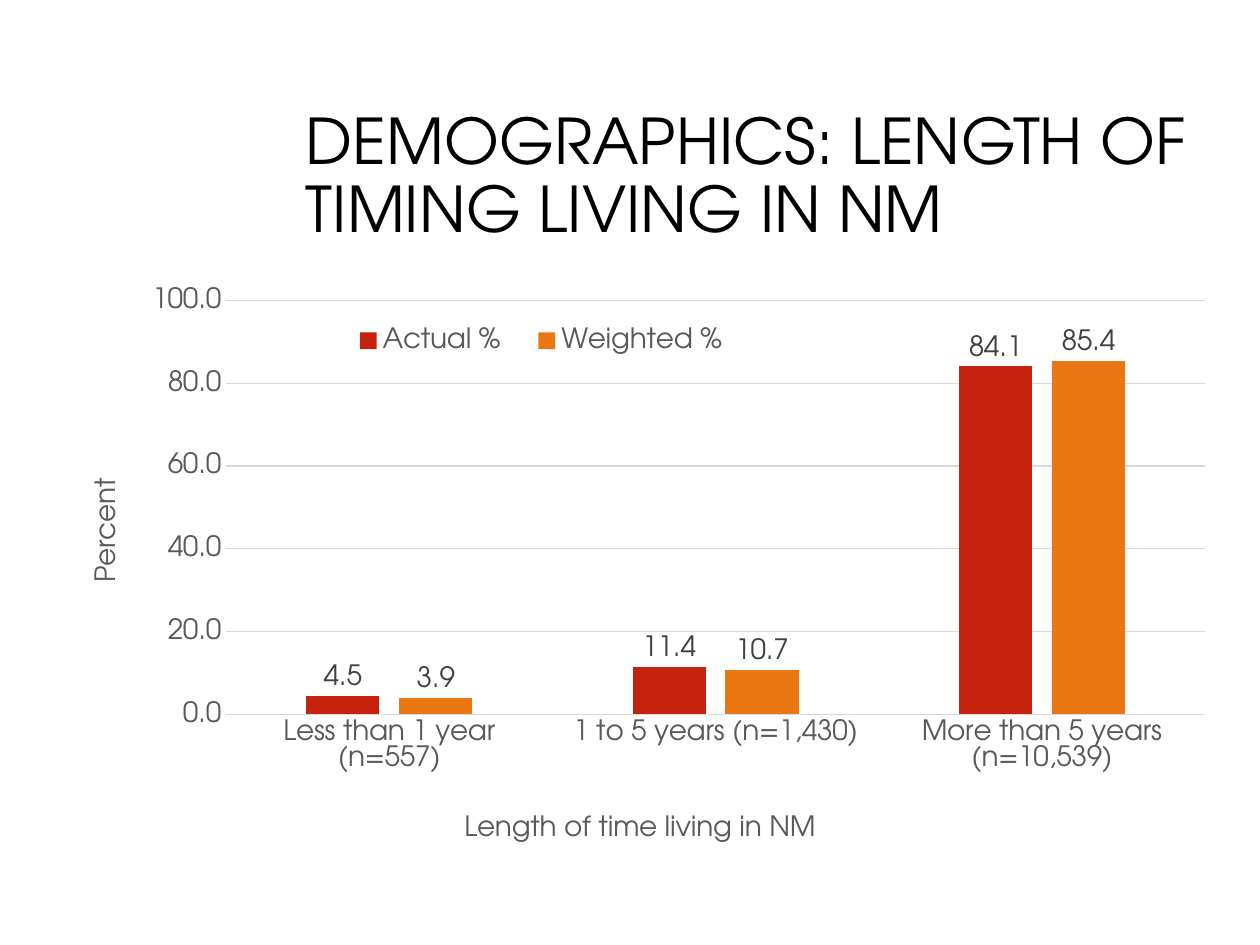
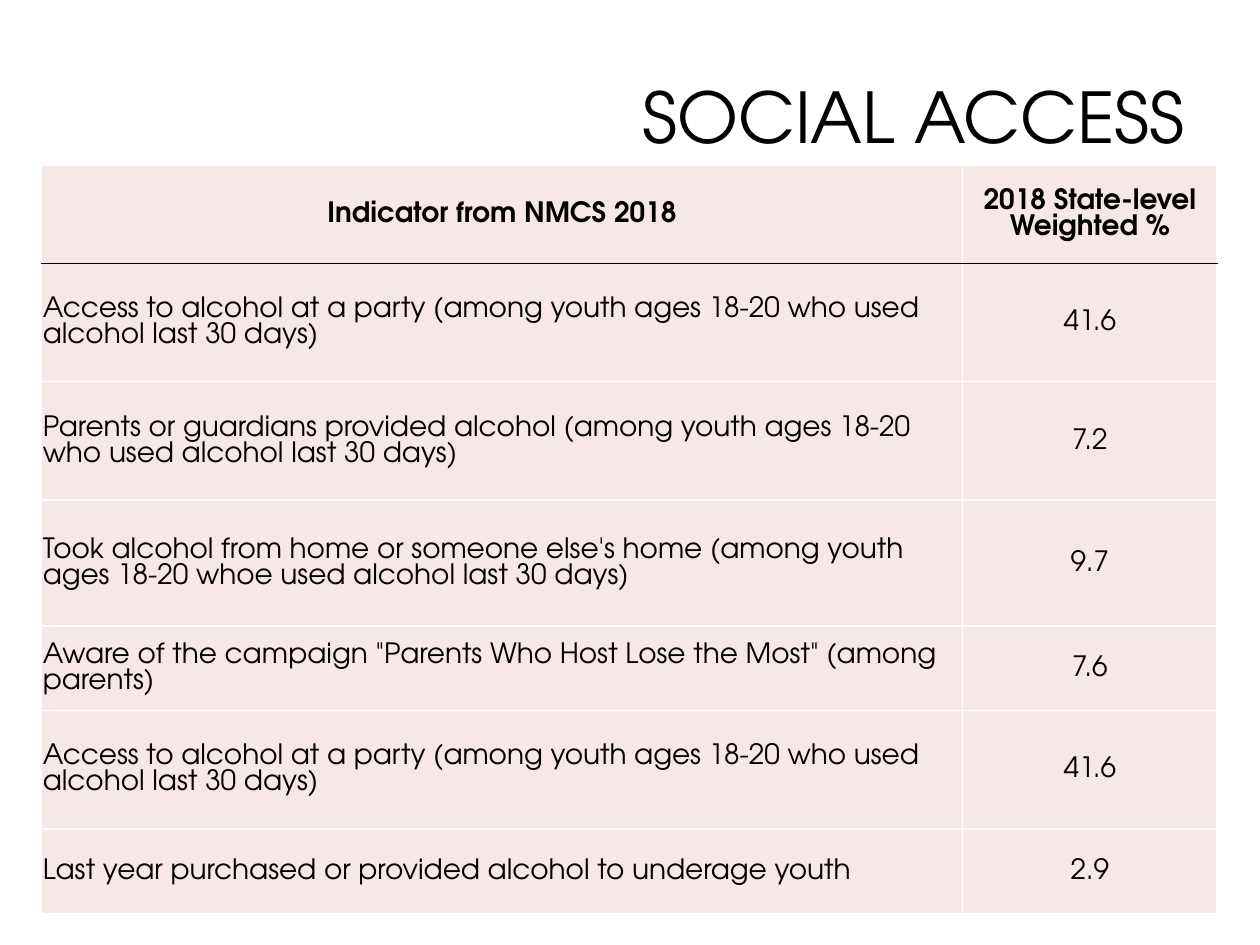
from typing import NamedTuple, Optional

from lxml import etree
from pptx import Presentation
from pptx.chart.data import CategoryChartData
from pptx.dml.color import RGBColor
from pptx.enum.chart import XL_CHART_TYPE, XL_LABEL_POSITION, XL_LEGEND_POSITION, XL_TICK_MARK
from pptx.enum.text import MSO_ANCHOR, PP_ALIGN
from pptx.oxml import parse_xml
from pptx.oxml.ns import nsdecls, qn
from pptx.util import Emu, Pt

# Shared style: 100 px to the inch
PX = 9144
FONT = "TeX Gyre Adventor"
BLACK = "000000"
WHITE = "FFFFFF"
GRID_GREY = "D9D9D9"
AXIS_GREY = "595959"
LABEL_GREY = "404040"
CELL_PINK = "F5E8E7"
BODY_SIZE = 16


class Box(NamedTuple):
    left: int
    top: int
    width: int
    height: int


class Series(NamedTuple):
    name: str
    values: tuple[float, ...]
    color: str


class Indicator(NamedTuple):
    text: str
    percent: str
    height: int


class Layout(NamedTuple):
    """Place inside the chart, as shares of its size."""
    x: float
    y: float
    width: Optional[float] = None
    height: Optional[float] = None


CATEGORIES = ("Less than 1 year (n=557)", "1 to 5 years (n=1,430)", "More than 5 years (n=10,539)")
RESIDENCE_SERIES = (
    Series("Actual %", (4.5, 11.4, 84.1), "C4220D"),
    Series("Weighted %", (3.9, 10.7, 85.4), "EB7712"),
)

HEADER = Indicator("Indicator from NMCS 2018", "2018 State-level Weighted %", 78)
PARTY_TEXT = "Access to alcohol at a party (among youth ages 18-20 who used alcohol last 30 days)"
INDICATORS = (
    Indicator(PARTY_TEXT, "41.6", 94),
    Indicator("Parents or guardians provided alcohol (among youth ages 18-20 who used alcohol "
              "last 30 days)", "7.2", 94),
    Indicator("Took alcohol from home or someone else's home (among youth ages 18-20 whoe used "
              "alcohol last 30 days)", "9.7", 100),
    Indicator('Aware of the campaign "Parents Who Host Lose the Most" (among parents)', "7.6", 67),
    Indicator(PARTY_TEXT, "41.6", 94),
    Indicator("Last year purchased or provided alcohol to underage youth", "2.9", 67),
)
COLUMN_WIDTHS = (731, 202)


def px(length: int) -> Emu:
    return Emu(length * PX)


def rgb(color: str) -> RGBColor:
    return RGBColor.from_string(color)


def style_font(font, color: str, size: int = BODY_SIZE, bold: bool = False) -> None:
    font.name = FONT
    font.size = Pt(size)
    font.bold = bold
    font.color.rgb = rgb(color)


def write_text(frame, text: str, *, color: str = BLACK, size: int = BODY_SIZE, bold: bool = False,
               align=PP_ALIGN.LEFT, line_spacing: Optional[float] = None) -> None:
    paragraph = frame.paragraphs[0]
    paragraph.alignment = align
    if line_spacing:
        paragraph.line_spacing = line_spacing
    run = paragraph.add_run()
    run.text = text
    style_font(run.font, color, size, bold)


def add_title(slide, text: str, box: Box, size: int, align=PP_ALIGN.LEFT) -> None:
    shape = slide.shapes.add_textbox(*map(px, box))
    frame = shape.text_frame
    frame.word_wrap = True
    frame.vertical_anchor = MSO_ANCHOR.MIDDLE
    write_text(frame, text, size=size, align=align, line_spacing=0.9)


# Chart parts
def place(element, layout: Layout, after: Optional[str] = None) -> None:
    """Give a chart part a fixed place; its layout follows the child named by after."""
    for old in element.findall(qn("c:layout")):
        element.remove(old)
    node = etree.Element(qn("c:layout"))
    manual = etree.SubElement(node, qn("c:manualLayout"))
    settings = {"xMode": "edge", "yMode": "edge", "x": layout.x, "y": layout.y}
    if after is None:
        settings = {"layoutTarget": "inner", **settings}
    if layout.width is not None:
        settings |= {"w": layout.width, "h": layout.height}
    for name, value in settings.items():
        etree.SubElement(manual, qn(f"c:{name}")).set("val", str(value))
    position = 0 if after is None else element.index(element.find(qn(after))) + 1
    element.insert(position, node)


def style_line(line, color: str) -> None:
    line.color.rgb = rgb(color)
    line.width = Pt(0.75)


def style_axis(axis, title: str, layout: Layout, rotation: int = 0) -> None:
    axis.major_tick_mark = XL_TICK_MARK.NONE
    axis.minor_tick_mark = XL_TICK_MARK.NONE
    style_font(axis.tick_labels.font, AXIS_GREY)
    frame = axis.axis_title.text_frame
    write_text(frame, title, color=AXIS_GREY, align=PP_ALIGN.CENTER)
    body = frame._txBody.find(qn("a:bodyPr"))
    body.set("rot", str(rotation * 60000))
    body.set("vert", "horz")
    place(axis.axis_title._element, layout, after="c:tx")


def add_residence_chart(slide, box: Box) -> None:
    data = CategoryChartData(number_format="0.0")
    data.categories = CATEGORIES
    for series in RESIDENCE_SERIES:
        data.add_series(series.name, series.values)
    chart = slide.shapes.add_chart(XL_CHART_TYPE.COLUMN_CLUSTERED, *map(px, box), data).chart
    chart.has_title = False
    style_font(chart.font, BLACK)

    # Columns and value labels
    plot = chart.plots[0]
    plot.gap_width = 219
    plot.overlap = -27
    plot.vary_by_categories = False
    for drawn, series in zip(plot.series, RESIDENCE_SERIES):
        drawn.format.fill.solid()
        drawn.format.fill.fore_color.rgb = rgb(series.color)
        labels = drawn.data_labels
        labels.show_value = True
        labels.position = XL_LABEL_POSITION.OUTSIDE_END
        labels.number_format = "0.0"
        labels.number_format_is_linked = False
        style_font(labels.font, LABEL_GREY)

    # Axes
    style_axis(chart.category_axis, "Length of time living in NM", Layout(0.34, 0.86))
    style_line(chart.category_axis.format.line, GRID_GREY)
    value_axis = chart.value_axis
    style_axis(value_axis, "Percent", Layout(0.02, 0.32), rotation=-90)
    value_axis.minimum_scale = 0
    value_axis.maximum_scale = 100
    value_axis.major_unit = 20
    value_axis.tick_labels.number_format = "0.0"
    value_axis.tick_labels.number_format_is_linked = False
    value_axis.format.line.fill.background()
    style_line(value_axis.major_gridlines.format.line, GRID_GREY)

    # Legend and plot area
    chart.has_legend = True
    chart.legend.position = XL_LEGEND_POSITION.BOTTOM
    chart.legend.include_in_layout = False
    style_font(chart.legend.font, AXIS_GREY)
    place(chart.legend._element, Layout(0.23, 0.07, 0.36, 0.07), after="c:legendPos")
    plot_area = chart._chartSpace.find(f".//{qn('c:plotArea')}")
    place(plot_area, Layout(0.14, 0.04, 0.84, 0.67))


# Table parts
def set_borders(cell, top: str, bottom: str) -> None:
    properties = cell._tc.get_or_add_tcPr()
    sides = {"L": WHITE, "R": WHITE, "T": top, "B": bottom}
    for position, (side, color) in enumerate(sides.items()):
        properties.insert(position, parse_xml(
            f'<a:ln{side} {nsdecls("a")} w="12700"><a:solidFill>'
            f'<a:srgbClr val="{color}"/></a:solidFill></a:ln{side}>'))


def fill_cell(cell, text: str, row: int, align) -> None:
    cell.fill.solid()
    cell.fill.fore_color.rgb = rgb(CELL_PINK)
    cell.margin_left = cell.margin_right = cell.margin_top = px(1)
    cell.margin_bottom = 0
    cell.vertical_anchor = MSO_ANCHOR.MIDDLE
    write_text(cell.text_frame, text, bold=row == 0, align=align)
    set_borders(cell, top=BLACK if row == 1 else WHITE, bottom=BLACK if row == 0 else WHITE)


def add_indicator_table(slide, left: int, top: int) -> None:
    rows = (HEADER, *INDICATORS)
    width, height = sum(COLUMN_WIDTHS), sum(row.height for row in rows)
    box = Box(left, top, width, height)
    table = slide.shapes.add_table(len(rows), len(COLUMN_WIDTHS), *map(px, box)).table
    table.horz_banding = False
    for column, column_width in zip(table.columns, COLUMN_WIDTHS):
        column.width = px(column_width)
    for number, indicator in enumerate(rows):
        table.rows[number].height = px(indicator.height)
        text_align = PP_ALIGN.CENTER if number == 0 else PP_ALIGN.LEFT
        fill_cell(table.cell(number, 0), indicator.text, number, text_align)
        fill_cell(table.cell(number, 1), indicator.percent, number, PP_ALIGN.CENTER)


def main() -> None:
    presentation = Presentation()
    presentation.slide_width = px(1000)
    presentation.slide_height = px(750)
    blank = presentation.slide_layouts[6]

    # Slide 1: length of residence
    slide = presentation.slides.add_slide(blank)
    add_title(slide, "DEMOGRAPHICS: LENGTH OF TIMING LIVING IN NM", Box(233, 108, 725, 67), 36)
    add_residence_chart(slide, Box(50, 219, 925, 490))

    # Slide 2: social access
    slide = presentation.slides.add_slide(blank)
    add_title(slide, "SOCIAL ACCESS", Box(408, 25, 542, 141), 40, PP_ALIGN.RIGHT)
    add_indicator_table(slide, 33, 131)

    presentation.save("out.pptx")


if __name__ == "__main__":
    main()
